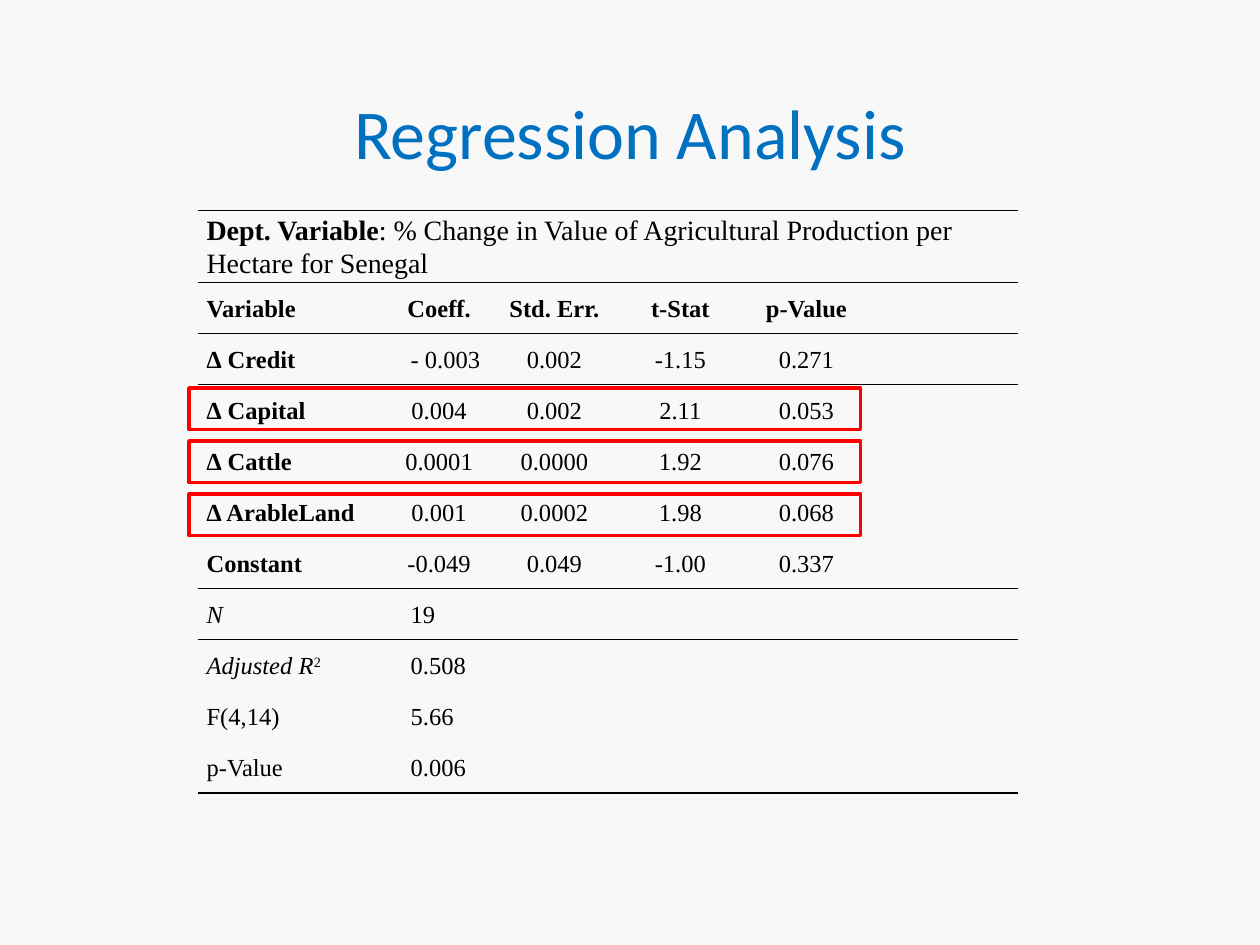
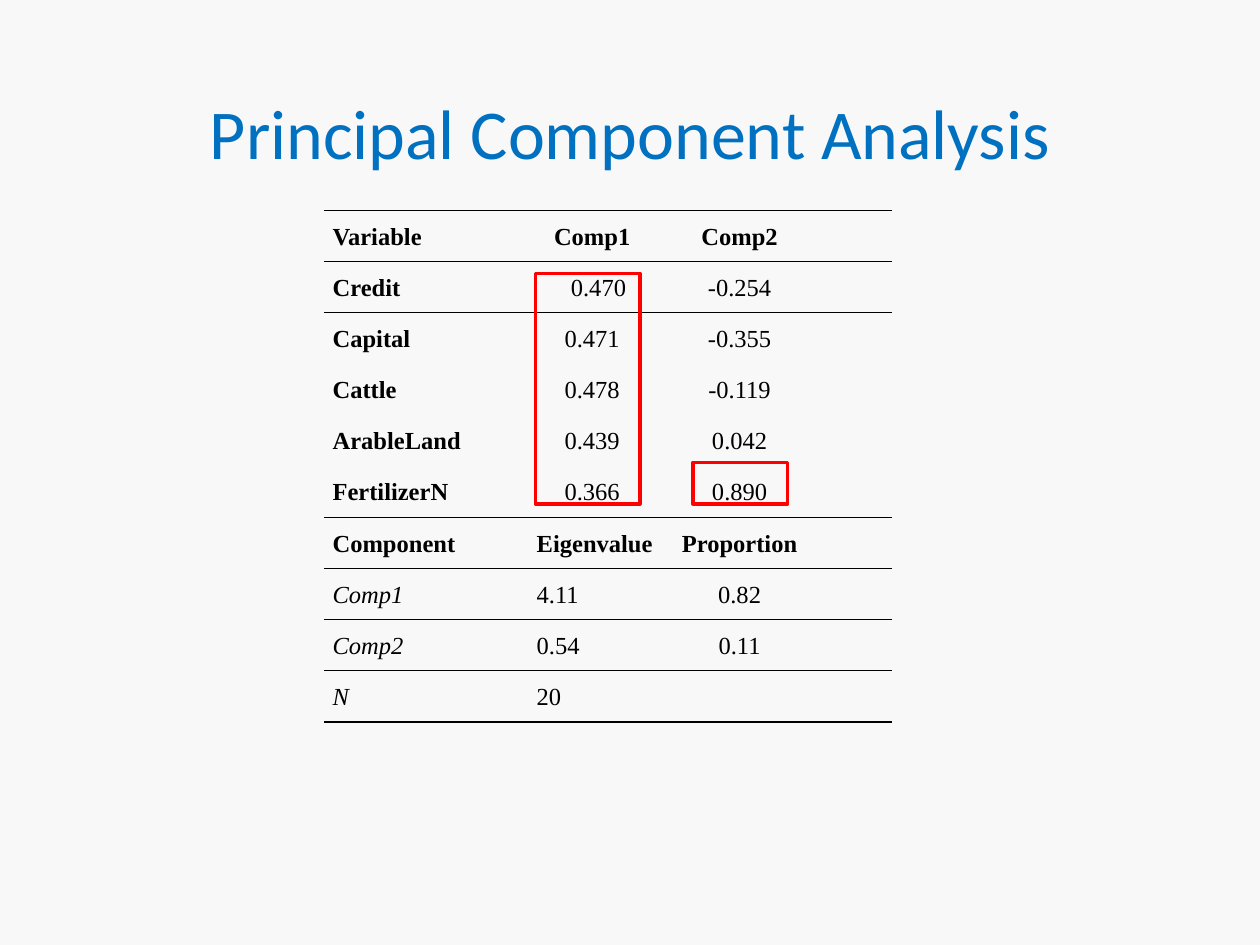
from dataclasses import dataclass

from lxml import etree
from pptx import Presentation
from pptx import util as u
from pptx.dml.color import RGBColor
from pptx.enum import shapes, text
from pptx.oxml.ns import qn


@dataclass(frozen=True)
class Theme:
    background: str = "F8F8F8"
    title: str = "0070C0"
    ink: str = "000000"
    highlight: str = "FF0000"
    title_font: str = "Calibri"
    table_font: str = "Times New Roman"
    title_size: int = 40
    caption_size: int = 16
    cell_size: int = 14
    rule_width: float = 1
    highlight_width: float = 2
    line_spacing: float = 1.07
    plain_table_style: str = "{2D5ABB26-0587-4C30-8999-92F81FD0307C}"


THEME = Theme()


@dataclass
class Row:
    cells: list
    label: str = ""
    values: str = ""
    size: int = THEME.cell_size
    value_indent: float = 0
    flush_value: bool = False
    spans: int = 1


def heading(*cells, **options):
    return Row(cells, label="b", values="b", **options)


def variable(*cells, **options):
    return Row(cells, label="b", **options)


def statistic(*cells, label="i"):
    return Row(cells, label=label, flush_value=True, value_indent=0.12)


def set_font(font, name, size, color):
    font.name = name
    font.size = u.Pt(size)
    font.color.rgb = RGBColor.from_string(color)


def add_slide(prs, title):
    s = prs.slides.add_slide(prs.slide_layouts[6])
    s.background.fill.solid()
    s.background.fill.fore_color.rgb = RGBColor.from_string(THEME.background)
    box = s.shapes.add_textbox(u.Inches(0.5), u.Inches(0.42), u.Inches(9), u.Inches(1.25))
    tf = box.text_frame
    tf.word_wrap = True
    tf.vertical_anchor = text.MSO_ANCHOR.MIDDLE
    p = tf.paragraphs[0]
    p.text = title
    p.alignment = text.PP_ALIGN.CENTER
    set_font(p.font, THEME.title_font, THEME.title_size, THEME.title)
    return s


def add_rule(cell, side):
    ln = etree.SubElement(cell._tc.get_or_add_tcPr(), qn(f"a:{side}"),
                          w=str(u.Pt(THEME.rule_width)))
    fill = etree.SubElement(ln, qn("a:solidFill"))
    etree.SubElement(fill, qn("a:srgbClr"), val=THEME.ink)


def fill_cell(cell, content, style, size, centred, indent):
    cell.margin_left = cell.margin_right = u.Inches(0.07)
    cell.margin_top = cell.margin_bottom = 0
    cell.vertical_anchor = text.MSO_ANCHOR.MIDDLE
    p = cell.text_frame.paragraphs[0]
    p.line_spacing = THEME.line_spacing
    p.alignment = text.PP_ALIGN.CENTER if centred else text.PP_ALIGN.LEFT
    set_font(p.font, THEME.table_font, size, THEME.ink)
    if indent:
        pPr = p._p.get_or_add_pPr()
        pPr.set("marL", str(u.Inches(indent)))
        pPr.set("indent", "0")
    runs = [(content, style)] if isinstance(content, str) else content
    for words, run_style in runs:
        if not words:
            continue
        r = p.add_run()
        r.text = words
        r.font.bold = "b" in run_style
        r.font.italic = "i" in run_style
        if "^" in run_style:
            r._r.get_or_add_rPr().set("baseline", "30000")


def add_ruled_table(s, left, height, widths, rows, rules):
    frame = s.shapes.add_table(len(rows), len(widths), u.Inches(left), u.Inches(1.67),
                               u.Inches(sum(widths)), u.Inches(height))
    table = frame.table
    table.first_row = table.horz_banding = False
    table._tbl.tblPr.find(qn("a:tableStyleId")).text = THEME.plain_table_style
    for column, width in zip(table.columns, widths):
        column.width = u.Inches(width)
    for i, row in enumerate(rows):
        if row.spans > 1:
            table.cell(i, 0).merge(table.cell(i, row.spans - 1))
        for j in range(len(widths)):
            cell = table.cell(i, j)
            fill_cell(cell, row.cells[j] if j < len(row.cells) else "",
                      row.values if j else row.label, row.size,
                      centred=j > 1 or (j == 1 and not row.flush_value),
                      indent=row.value_indent if j == 1 else 0)
            if i in rules:
                add_rule(cell, "lnT")
            if i + 1 in rules:
                add_rule(cell, "lnB")
            cell.fill.background()


def add_highlight(s, left, top, width, height):
    sp = s.shapes.add_shape(shapes.MSO_SHAPE.RECTANGLE, u.Inches(left), u.Inches(top),
                            u.Inches(width), u.Inches(height))
    sp.shadow.inherit = False
    sp.fill.background()
    sp.line.color.rgb = RGBColor.from_string(THEME.highlight)
    sp.line.width = u.Pt(THEME.highlight_width)


def add_regression(prs):
    s = add_slide(prs, "Regression Analysis")
    caption = [("Dept. Variable", "b"),
               (": % Change in Value of Agricultural Production per Hectare for Senegal", "")]
    rows = [
        Row([caption], size=THEME.caption_size, spans=6),
        heading("Variable", "Coeff.", "Std. Err.", "t-Stat", "p-Value"),
        variable("∆ Credit", "- 0.003", "0.002", "-1.15", "0.271", value_indent=0.1),
        variable("∆ Capital", "0.004", "0.002", "2.11", "0.053"),
        variable("∆ Cattle", "0.0001", "0.0000", "1.92", "0.076"),
        variable("∆ ArableLand", "0.001", "0.0002", "1.98", "0.068"),
        variable("Constant", "-0.049", "0.049", "-1.00", "0.337"),
        statistic("N", "19"),
        statistic([("Adjusted R", "i"), ("2", "^")], "0.508"),
        statistic("F(4,14)", "5.66", label=""),
        statistic("p-Value", "0.006", label=""),
    ]
    add_ruled_table(s, 1.57, 4.46, [1.5, 0.83, 1, 1, 1, 1, 0.18], rows, {0, 1, 2, 7, 11})
    for i in range(3):
        add_highlight(s, 1.5, 3.08 + 0.42 * i, 5.33, 0.33)


def add_components(prs):
    s = add_slide(prs, "Principal Component Analysis")
    rows = [
        heading("Variable", "Comp1", "Comp2"),
        variable("Credit", "0.470", "-0.254", value_indent=0.1),
        variable("Capital", "0.471", "-0.355"),
        variable("Cattle", "0.478", "-0.119"),
        variable("ArableLand", "0.439", "0.042"),
        variable("FertilizerN", "0.366", "0.890"),
        heading("Component", "Eigenvalue", "Proportion", flush_value=True, value_indent=0.12),
        statistic("Comp1", "4.11", "0.82"),
        statistic("Comp2", "0.54", "0.11"),
        statistic("N", "20"),
    ]
    add_ruled_table(s, 2.57, 4.06, [1.5, 1.26, 1.08, 0.49, 0.18], rows, {0, 1, 6, 7, 9, 10})
    add_highlight(s, 5.5, 3.67, 0.75, 0.33)
    add_highlight(s, 4.25, 2.17, 0.83, 1.83)


def main():
    prs = Presentation()
    prs.slide_width, prs.slide_height = u.Inches(10), u.Inches(7.5)
    add_regression(prs)
    add_components(prs)
    prs.save("out.pptx")


if __name__ == "__main__":
    main()
